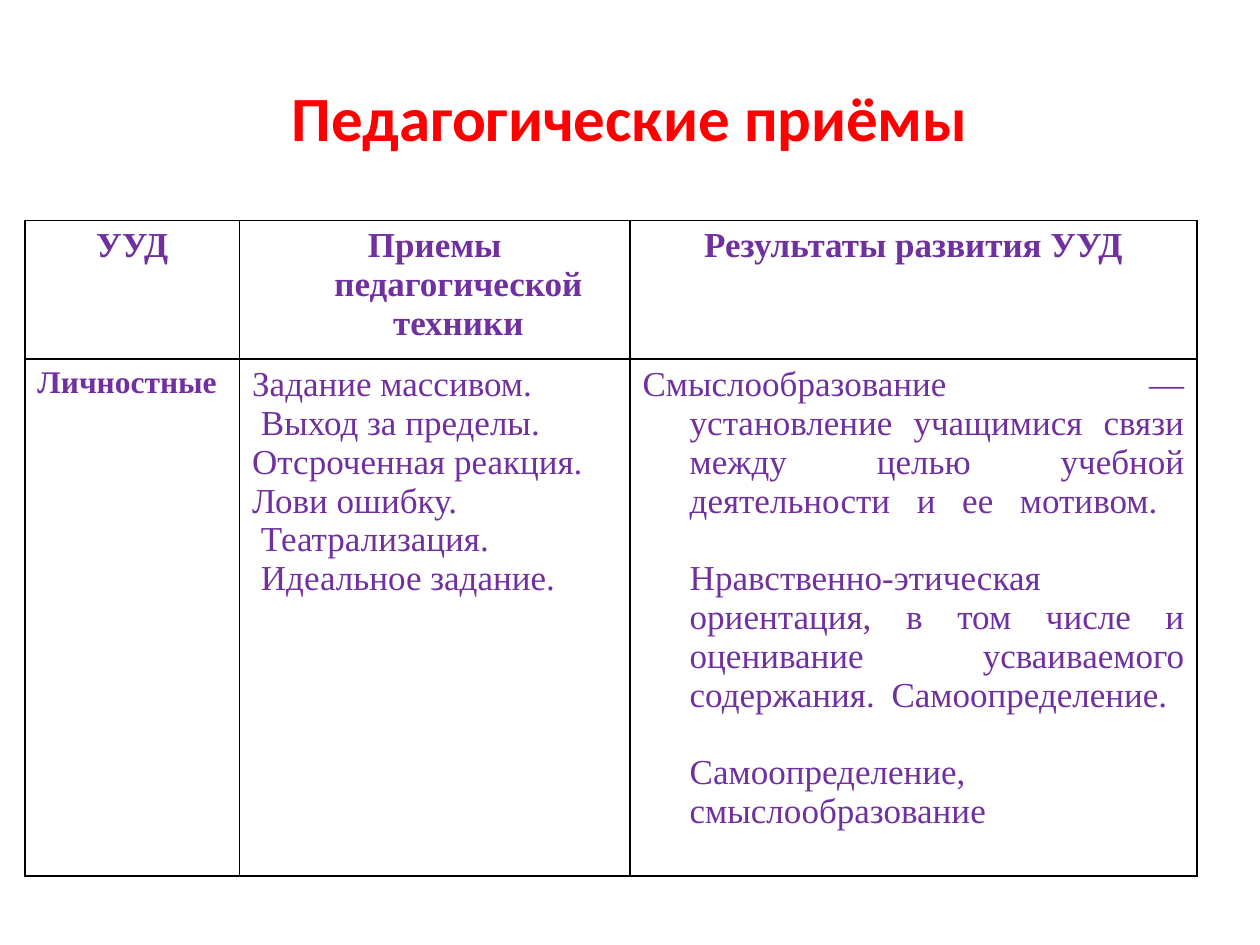
from copy import deepcopy

from lxml import etree
from pptx import Presentation
from pptx.dml.color import RGBColor
from pptx.enum import text
from pptx.oxml.ns import qn
from pptx.util import Cm, Pt

RED = RGBColor(0xFF, 0x00, 0x00)
PURPLE = RGBColor(0x70, 0x30, 0xA0)
BORDER = RGBColor(0x00, 0x00, 0x00)
CENTER, JUSTIFY = text.PP_ALIGN.CENTER, text.PP_ALIGN.JUSTIFY
HANGING = Cm(0.95)


def write(para, words, size, bold, name="Times New Roman", color=PURPLE):
    """Fill a paragraph; line breaks take the format of the text around them."""
    para.text = words
    for span in para.runs:
        for key, value in {"size": Pt(size), "bold": bold, "name": name}.items():
            setattr(span.font, key, value)
        span.font.color.rgb = color
    for line_break in para._p.findall(qn("a:br")):
        line_break.insert(0, deepcopy(para.runs[0]._r.rPr))


def add_borders(cell):
    for side in ("lnL", "lnR", "lnT", "lnB"):
        line = etree.SubElement(cell._tc.get_or_add_tcPr(), qn(f"a:{side}"), w=str(Pt(1)))
        fill = etree.SubElement(line, qn("a:solidFill"))
        etree.SubElement(fill, qn("a:srgbClr"), val=str(BORDER))


deck = Presentation()
deck.slide_width, deck.slide_height = Cm(25.4), Cm(19.05)
page = deck.slides.add_slide(deck.slide_layouts[6])

box = page.shapes.add_textbox(Cm(1.27), Cm(0.76), Cm(22.86), Cm(3.18))
box.text_frame.word_wrap = True
box.text_frame.vertical_anchor = text.MSO_ANCHOR.MIDDLE
title = box.text_frame.paragraphs[0]
title.alignment = CENTER
write(title, "Педагогические приёмы", 36, True, "Calibri", RED)

# Each cell: paragraphs, size, bold, alignment
ROWS = [
    [
        (["УУД"], 20, True, CENTER),
        (["Приемы педагогической техники"], 20, True, CENTER),
        (["Результаты развития УУД"], 20, True, CENTER),
    ],
    [
        (["Личностные"], 18, True, JUSTIFY),
        ([
            "Задание массивом.",
            " Выход за пределы.",
            "Отсроченная реакция.",
            "Лови ошибку.",
            " Театрализация.",
            " Идеальное задание.",
        ], 20, False, JUSTIFY),
        ([
            "Смыслообразование — установление учащимися связи между целью "
            "учебной деятельности и ее мотивом. \v\v"
            "Нравственно-этическая ориентация, в том числе и оценивание "
            "усваиваемого содержания. Самоопределение. \v\v"
            "Самоопределение, смыслообразование",
        ], 20, False, JUSTIFY),
    ],
]
WIDTHS = [Cm(4.33), Cm(7.87), Cm(11.43)]
HEIGHTS = [Cm(1.47), Cm(9.78)]

table = page.shapes.add_table(
    len(HEIGHTS), len(WIDTHS), Cm(0.5), Cm(4.44), sum(WIDTHS), sum(HEIGHTS)
).table
table.first_row = table.horz_banding = False
for column, width in zip(table.columns, WIDTHS):
    column.width = width
for row, height, contents in zip(table.rows, HEIGHTS, ROWS):
    row.height = height
    for cell, (lines, size, bold, alignment) in zip(row.cells, contents):
        add_borders(cell)
        cell.fill.background()
        for number, words in enumerate(lines):
            frame = cell.text_frame
            para = frame.add_paragraph() if number else frame.paragraphs[0]
            para.alignment = alignment
            properties = para._p.get_or_add_pPr()
            properties.set("marL", str(HANGING))
            properties.set("indent", str(-HANGING))
            write(para, words, size, bold)

deck.save("out.pptx")
